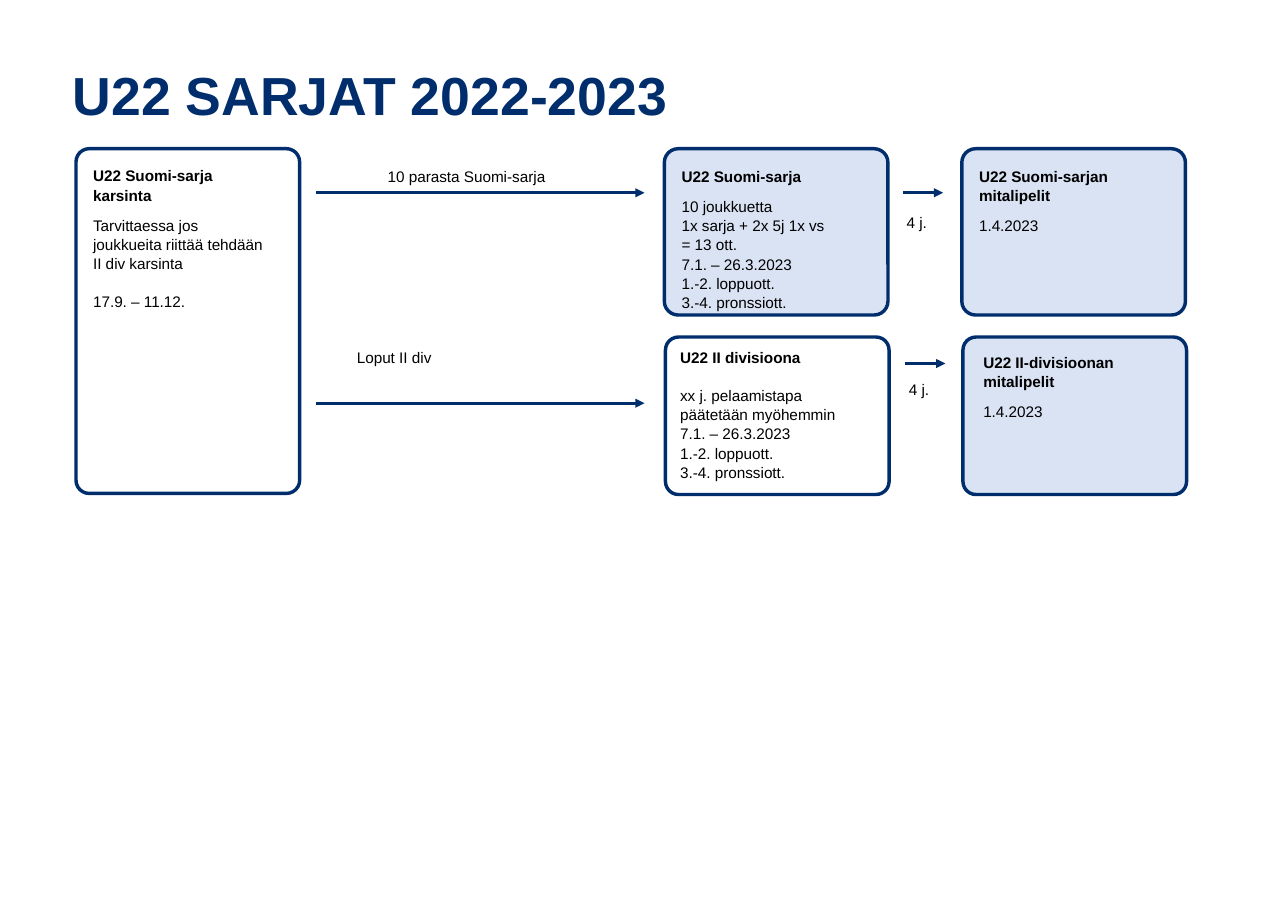
from lxml.etree import SubElement
from pptx import Presentation
from pptx.dml.color import RGBColor
from pptx.enum.shapes import MSO_CONNECTOR, MSO_SHAPE
from pptx.enum.text import MSO_ANCHOR, MSO_AUTO_SIZE, PP_ALIGN
from pptx.oxml.ns import qn
from pptx.util import Pt

PX = 9144
THEME = {
    "navy": RGBColor(0x00, 0x2E, 0x6D),
    "pale": RGBColor(0xDA, 0xE3, 0xF3),
    "black": RGBColor(0, 0, 0),
    "font": "Arial",
    "title": Pt(35),
    "body": Pt(10),
    "outline": Pt(2.25),
    "arrow": Pt(2),
}


def px(*lengths):
    return [length * PX for length in lengths]


def write(shape, paragraphs, margins, size, color):
    frame = shape.text_frame
    left, top, right, bottom = px(*margins)
    layout = {
        "word_wrap": True,
        "auto_size": MSO_AUTO_SIZE.NONE,
        "vertical_anchor": MSO_ANCHOR.TOP,
        "margin_left": left,
        "margin_top": top,
        "margin_right": right,
        "margin_bottom": bottom,
    }
    for name, value in layout.items():
        setattr(frame, name, value)
    for index, (text, bold, gap) in enumerate(paragraphs):
        para = frame.paragraphs[0] if index == 0 else frame.add_paragraph()
        para.alignment = PP_ALIGN.LEFT
        para.line_spacing = 1.05
        para.space_before = Pt(gap)
        span = para.add_run()
        span.text = text
        for name, value in {"name": THEME["font"], "size": size, "bold": bold}.items():
            setattr(span.font, name, value)
        span.font.color.rgb = color


deck = Presentation()
deck.slide_width, deck.slide_height = px(1169, 827)
page = deck.slides.add_slide(deck.slide_layouts[5])

title = page.shapes.title
title.left, title.top, title.width, title.height = px(56, 48, 964, 69)
write(title, [("U22 SARJAT 2022-2023", True, 0)], (10, 5, 10, 5), THEME["title"], THEME["navy"])

finals = [("1.-2. loppuott.", False, 0), ("3.-4. pronssiott.", False, 0)]
medal_games = [("mitalipelit", True, 0), ("1.4.2023", False, 7)]
cards = [
    ((69, 135, 203, 313), 0.059, None, (12, 12), [
        ("U22 Suomi-sarja karsinta", True, 0),
        ("Tarvittaessa jos joukkueita riittää tehdään II div karsinta", False, 7),
        ("17.9. – 11.12.", False, 12),
    ]),
    ((603, 135, 203, 151), 0.083, THEME["pale"], (12, 12), [
        ("U22 Suomi-sarja", True, 0),
        ("10 joukkuetta", False, 7),
        ("1x sarja + 2x 5j 1x vs", False, 0),
        ("= 13 ott.", False, 0),
        ("7.1. – 26.3.2023", False, 0),
        *finals,
    ]),
    ((604, 306, 203, 143), 0.083, None, (10, 6), [
        ("U22 II divisioona", True, 0),
        ("xx j. pelaamistapa päätetään myöhemmin", False, 12),
        ("7.1. – 26.3.2023", False, 0),
        *finals,
    ]),
    ((873, 135, 203, 151), 0.083, THEME["pale"], (12, 12),
     [("U22 Suomi-sarjan", True, 0), *medal_games]),
    ((874, 306, 203, 143), 0.083, THEME["pale"], (15, 10),
     [("U22 II-divisioonan", True, 0), *medal_games]),
]
for bounds, corner, fill, (left, top), paragraphs in cards:
    card = page.shapes.add_shape(MSO_SHAPE.ROUNDED_RECTANGLE, *px(*bounds))
    card.adjustments[0] = corner
    card.shadow.inherit = False
    card.line.color.rgb = THEME["navy"]
    card.line.width = THEME["outline"]
    if fill is None:
        card.fill.background()
    else:
        card.fill.solid()
        card.fill.fore_color.rgb = fill
    write(card, paragraphs, (left, top, 23, 0), THEME["body"], THEME["black"])

for start, end, height in [(287, 585, 175), (287, 585, 366), (820, 856, 175), (821, 858, 330)]:
    arrow = page.shapes.add_connector(MSO_CONNECTOR.STRAIGHT, *px(start, height, end, height))
    arrow.line.color.rgb = THEME["navy"]
    arrow.line.width = THEME["arrow"]
    SubElement(arrow.line._get_or_add_ln(), qn("a:tailEnd"), type="triangle")
    SubElement(arrow._element.spPr, qn("a:effectLst"))

labels = [
    ("10 parasta Suomi-sarja", 342, 146, 224),
    ("Loput II div", 314, 310, 148),
    ("4 j.", 813, 188, 49),
    ("4 j.", 815, 339, 49),
]
for text, left, top, width in labels:
    label = page.shapes.add_textbox(*px(left, top, width, 57))
    write(label, [(text, False, 0)], (10, 5, 10, 5), THEME["body"], THEME["black"])

deck.save("out.pptx")
